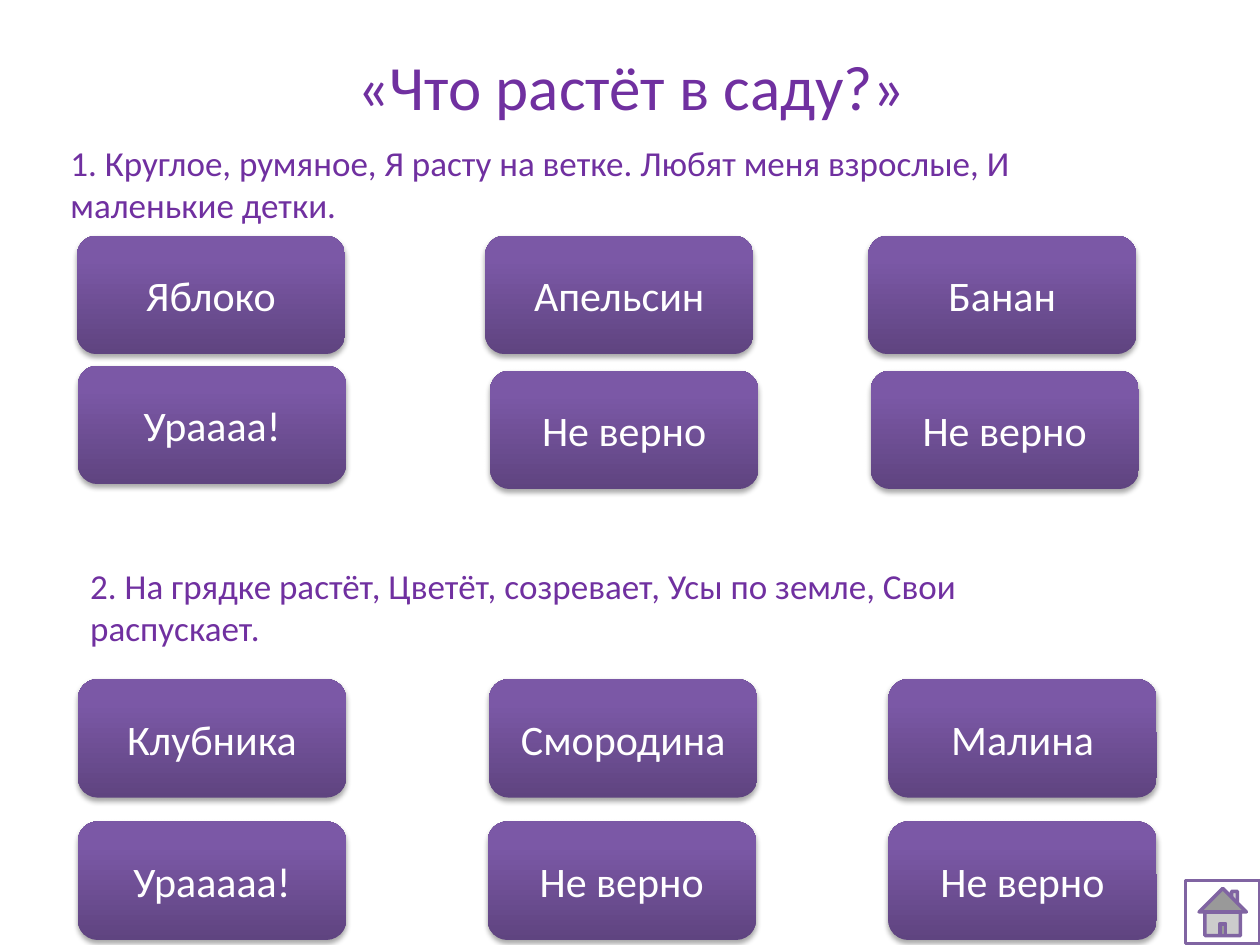
from pptx import Presentation
from pptx.dml.color import RGBColor
from pptx.enum.shapes import MSO_SHAPE
from pptx.enum.text import MSO_ANCHOR, PP_ALIGN
from pptx.oxml import parse_xml
from pptx.oxml.ns import nsdecls
from pptx.util import Cm, Pt

COLORS = {
    "heading": "7030A0",
    "answer": "FFFFFF",
    "bottom": "5F4480",
    "middle": "7B58A6",
    "top": "7C57A8",
    "shadow": "000000",
    "home_fill": "FFFFFF",
    "home_line": "8064A2",
}

# Boxes are left, top, width, height in cm
TITLE = ("«Что растёт в саду?»", (1.3, 0.33, 22.86, 2.77))
RIDDLES = [
    ("1. Круглое, румяное, Я расту на ветке. Любят меня взрослые, И маленькие детки.",
     (1.17, 2.72, 22.8, 1.8)),
    ("2. На грядке растёт, Цветёт, созревает, Усы по земле, Свои распускает.",
     (1.57, 11.25, 21.31, 1.96)),
]
# Each answer: text, left, top in cm
ANSWERS = [
    ("Яблоко", 1.55, 4.75), ("Апельсин", 9.78, 4.75), ("Банан", 17.5, 4.75),
    ("Ураааа!", 1.57, 7.37), ("Не верно", 9.88, 7.47), ("Не верно", 17.55, 7.47),
    ("Клубника", 1.57, 13.69), ("Смородина", 9.86, 13.69), ("Малина", 17.91, 13.69),
    ("Урааааа!", 1.57, 16.56), ("Не верно", 9.83, 16.56), ("Не верно", 17.91, 16.56),
]
ANSWER_SIZE = (5.41, 2.39)
HOME_BOX = (23.9, 17.75, 1.5, 1.27)
GRADIENT_STOPS = [(0, "bottom"), (80, "middle"), (100, "top")]


def in_cm(box):
    return [Cm(length) for length in box]


def write(shape, text, size, color, align=PP_ALIGN.LEFT, anchor=MSO_ANCHOR.TOP):
    frame = shape.text_frame
    frame.word_wrap = True
    frame.vertical_anchor = anchor
    paragraph = frame.paragraphs[0]
    paragraph.alignment = align
    run = paragraph.add_run()
    run.text = text
    run.font.name = "Calibri"
    run.font.size = Pt(size)
    run.font.color.rgb = RGBColor.from_string(COLORS[color])


def add_gradient(shape):
    stops = "".join(
        f'<a:gs pos="{percent * 1000}"><a:srgbClr val="{COLORS[name]}"/></a:gs>'
        for percent, name in GRADIENT_STOPS)
    gradient = parse_xml(
        f'<a:gradFill {nsdecls("a")} rotWithShape="1"><a:gsLst>{stops}</a:gsLst>'
        '<a:lin ang="16200000" scaled="0"/></a:gradFill>')
    properties = shape.element.spPr
    properties.insert(properties.index(properties.prstGeom) + 1, gradient)


def add_shadow(shape):
    shape.shadow.inherit = False
    shape.element.spPr[-1].append(parse_xml(
        f'<a:outerShdw {nsdecls("a")} blurRad="{Pt(3.1)}" dist="{Pt(1.8)}" '
        f'dir="5400000" rotWithShape="0"><a:srgbClr val="{COLORS["shadow"]}">'
        '<a:alpha val="35000"/></a:srgbClr></a:outerShdw>'))


def add_answer(shapes, text, left, top):
    button = shapes.add_shape(MSO_SHAPE.ROUNDED_RECTANGLE,
                              *in_cm((left, top, *ANSWER_SIZE)))
    button.line.fill.background()
    add_gradient(button)
    add_shadow(button)
    write(button, text, 24, "answer", align=PP_ALIGN.CENTER, anchor=MSO_ANCHOR.MIDDLE)


def add_home_button(shapes):
    home = shapes.add_shape(MSO_SHAPE.ACTION_BUTTON_HOME, *in_cm(HOME_BOX))
    home.shadow.inherit = False
    home.fill.solid()
    home.fill.fore_color.rgb = RGBColor.from_string(COLORS["home_fill"])
    home.line.color.rgb = RGBColor.from_string(COLORS["home_line"])
    home.line.width = Pt(2)


def main():
    presentation = Presentation()
    presentation.slide_width, presentation.slide_height = Cm(25.4), Cm(19.05)
    shapes = presentation.slides.add_slide(presentation.slide_layouts[6]).shapes

    title, title_box = TITLE
    write(shapes.add_textbox(*in_cm(title_box)), title, 36, "heading",
          align=PP_ALIGN.CENTER, anchor=MSO_ANCHOR.MIDDLE)
    for riddle, box in RIDDLES:
        write(shapes.add_textbox(*in_cm(box)), riddle, 20, "heading")
    for answer in ANSWERS:
        add_answer(shapes, *answer)
    add_home_button(shapes)

    presentation.save("out.pptx")


if __name__ == "__main__":
    main()
